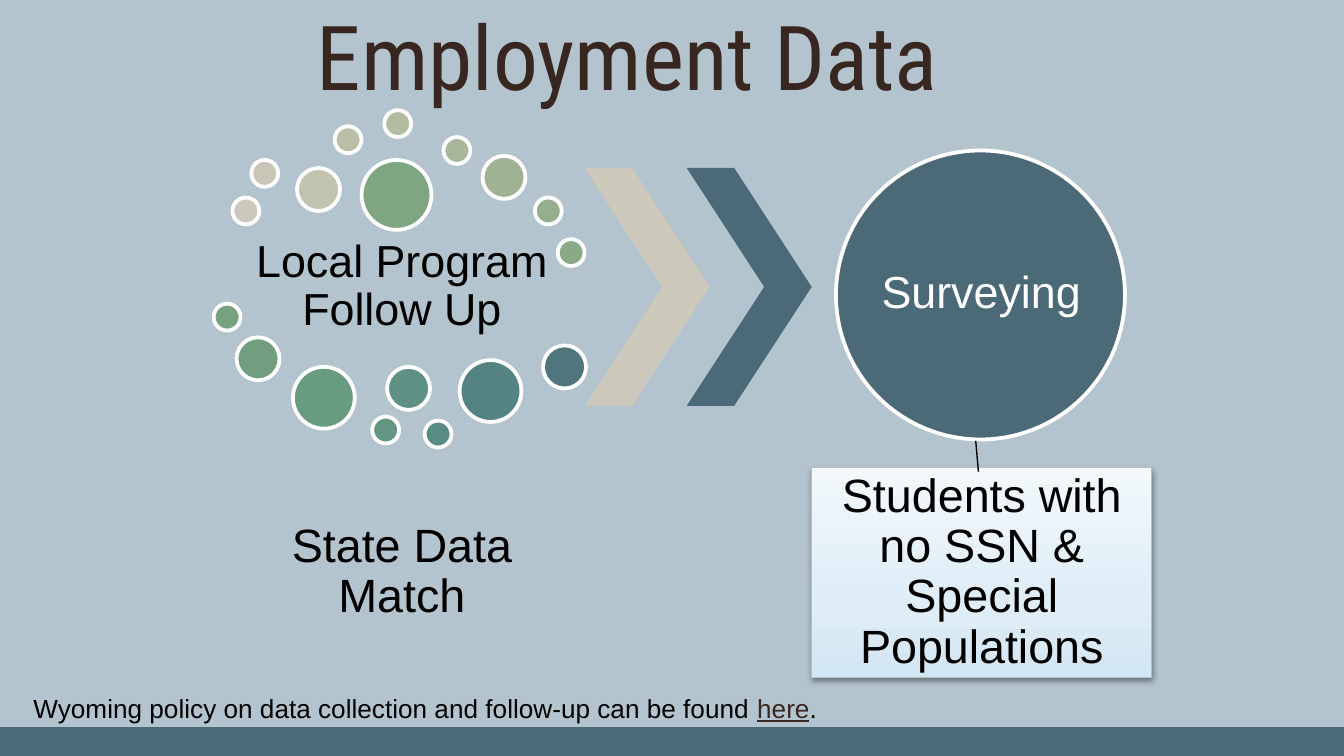
from copy import deepcopy

from lxml.etree import SubElement
from pptx import Presentation
from pptx.dml.color import RGBColor
from pptx.enum.shapes import MSO_CONNECTOR, MSO_SHAPE
from pptx.enum.text import MSO_ANCHOR as ANCHOR, PP_ALIGN as ALIGN
from pptx.oxml.ns import qn
from pptx.util import Inches, Pt

COLS, ROWS = 100, 56.25
WIDTH = Inches(10)
HEIGHT = WIDTH * 9 // 16
SKY = RGBColor(0xB4, 0xC4, 0xCE)
SLATE = RGBColor(0x4B, 0x69, 0x77)
SAND = RGBColor(0xCC, 0xC8, 0xBC)
BROWN = RGBColor(0x38, 0x26, 0x20)
BLACK = RGBColor(0, 0, 0)
WHITE = RGBColor(255, 255, 255)
EDGE = RGBColor(0xAF, 0xC0, 0xCA)
CARD_STOPS = [
    (0, RGBColor(0xD3, 0xE6, 0xF3)),
    (0.35, RGBColor(0xDF, 0xED, 0xF6)),
    (1, RGBColor(0xF2, 0xF8, 0xFC)),
]
SMALL, MEDIUM, LARGE, CORE = 2, 3.2, 4.6, 5.2
BUBBLES = [
    (17.3, 14.7, SMALL, SAND),
    (18.7, 11.9, SMALL, RGBColor(0xC8, 0xC6, 0xB5)),
    (22.1, 12.5, MEDIUM, RGBColor(0xC2, 0xC3, 0xAF)),
    (24.9, 9.4, SMALL, RGBColor(0xBB, 0xBF, 0xA8)),
    (28.6, 8.2, SMALL, RGBColor(0xB3, 0xBB, 0xA1)),
    (33, 10.2, SMALL, RGBColor(0xAA, 0xB6, 0x9B)),
    (35.9, 11.6, MEDIUM, RGBColor(0xA0, 0xB2, 0x94)),
    (39.8, 14.7, SMALL, RGBColor(0x95, 0xAE, 0x8D)),
    (41.5, 17.8, SMALL, RGBColor(0x8A, 0xAA, 0x86)),
    (26.9, 11.9, CORE, RGBColor(0x7F, 0xA6, 0x80)),
    (15.9, 22.6, SMALL, RGBColor(0x78, 0xA2, 0x7F)),
    (17.6, 25.1, MEDIUM, RGBColor(0x71, 0x9E, 0x7F)),
    (21.8, 27.3, LARGE, RGBColor(0x69, 0x9B, 0x80)),
    (27.7, 31, SMALL, RGBColor(0x63, 0x96, 0x82)),
    (28.8, 27.3, MEDIUM, RGBColor(0x5E, 0x90, 0x83)),
    (31.6, 31.3, SMALL, RGBColor(0x59, 0x8A, 0x84)),
    (34.2, 26.8, LARGE, RGBColor(0x55, 0x82, 0x83)),
    (40.4, 25.7, MEDIUM, RGBColor(0x50, 0x75, 0x7D)),
]


def grid(x, y, w, h):
    col, row = WIDTH / COLS, HEIGHT / ROWS
    return round(x * col), round(y * row), round(w * col), round(h * row)


def add_run(p, text, size, color, font="Arial", underline=None):
    r = p.add_run()
    r.text = text
    r.font.name, r.font.size = font, Pt(size)
    r.font.color.rgb = color
    r.font.underline = underline


def add_shape(s, kind, box, fill, line=None):
    sp = s.shapes.add_shape(kind, *grid(*box))
    sp.shadow.inherit = False
    sp.fill.solid()
    sp.fill.fore_color.rgb = fill
    if line:
        sp.line.color.rgb, sp.line.width = line, Pt(2)
    else:
        sp.line.fill.background()
    return sp


def set_insets(tf, inset):
    tf.margin_left = tf.margin_right = tf.margin_top = tf.margin_bottom = Inches(inset)


def add_label(s, box, text, size, color=BLACK, inset=0.03):
    tf = s.shapes.add_textbox(*grid(*box)).text_frame
    tf.word_wrap = True
    tf.vertical_anchor = ANCHOR.MIDDLE
    set_insets(tf, inset)
    p = tf.paragraphs[0]
    p.alignment, p.line_spacing = ALIGN.CENTER, 0.9
    add_run(p, text, size, color)


def add_title(s, text):
    sp = s.shapes.title
    sp.left, sp.top, sp.width, sp.height = grid(17.3, 0, 58.8, 9.1)
    tf = sp.text_frame
    tf.vertical_anchor = ANCHOR.BOTTOM
    set_insets(tf, 0.1)
    p = tf.paragraphs[0]
    p.alignment = ALIGN.CENTER
    add_run(p, text, 48, BROWN, "Roboto Condensed")


def add_policy_note(s):
    tf = s.shapes.add_textbox(*grid(1.5, 51, 68.4, 3.4)).text_frame
    tf.word_wrap = True
    p = tf.paragraphs[0]
    add_run(p, "Wyoming policy on data collection and follow-up can be found ", 14, BLACK)
    add_run(p, "here", 14, BROWN, underline=True)
    add_run(p, ".", 14, BLACK)


def add_card(s, box):
    sp = add_shape(s, MSO_SHAPE.RECTANGLE, box, WHITE, EDGE)
    sp.line.width = Pt(0.75)
    sp.fill.gradient()
    sp.fill.gradient_angle = 90
    spPr = sp._element.spPr
    stops = spPr.find(".//" + qn("a:gsLst"))
    stops.insert(1, deepcopy(stops[0]))
    for stop, (position, color) in zip(sp.fill.gradient_stops, CARD_STOPS):
        stop.position = position
        stop.color.rgb = color
    shadow = SubElement(spPr.find(qn("a:effectLst")), qn("a:outerShdw"),
                        blurRad=str(Pt(3.1)), dist=str(Pt(1.6)),
                        dir="5400000", rotWithShape="0")
    tint = SubElement(shadow, qn("a:srgbClr"), val=str(BLACK))
    SubElement(tint, qn("a:alpha"), val="38000")


def add_line(s, x1, y1, x2, y2):
    cx = s.shapes.add_connector(MSO_CONNECTOR.STRAIGHT, *grid(x1, y1, x2, y2))
    cx.line.color.rgb, cx.line.width = BLACK, Pt(0.75)
    SubElement(cx._element.spPr, qn("a:effectLst"))


def main():
    prs = Presentation()
    prs.slide_width, prs.slide_height = WIDTH, HEIGHT
    s = prs.slides.add_slide(prs.slide_layouts[5])
    s.background.fill.solid()
    s.background.fill.fore_color.rgb = SKY

    add_shape(s, MSO_SHAPE.RECTANGLE, (0, 54.1, COLS, 2.15), SLATE)
    add_title(s, "Employment Data")
    add_policy_note(s)

    add_label(s, (17.3, 17.2, 25.2, 8.3), "Local Program Follow Up", 24)
    add_label(s, (17.3, 34.8, 25.2, 15.6), "State Data Match", 25)
    for x, y, size, color in BUBBLES:
        add_shape(s, MSO_SHAPE.OVAL, (x, y, size, size), color, WHITE)

    for i, color in enumerate((SAND, SLATE)):
        sp = add_shape(s, MSO_SHAPE.CHEVRON, (43.5 + 7.6 * i, 12.5, 9.3, 17.7), color)
        sp.adjustments[0] = 0.62

    add_shape(s, MSO_SHAPE.OVAL, (62.2, 11.2, 21.5, 21.5), SLATE, WHITE)
    add_label(s, (65.4, 14.3, 15.2, 15.2), "Surveying", 24, WHITE, 0)

    card = (60.4, 34.8, 25.3, 15.6)
    add_card(s, card)
    add_label(s, card, "Students with no SSN & Special Populations", 25)
    add_line(s, 72.6, 32.8, 72.8, 35.1)

    prs.save("out.pptx")


if __name__ == "__main__":
    main()
